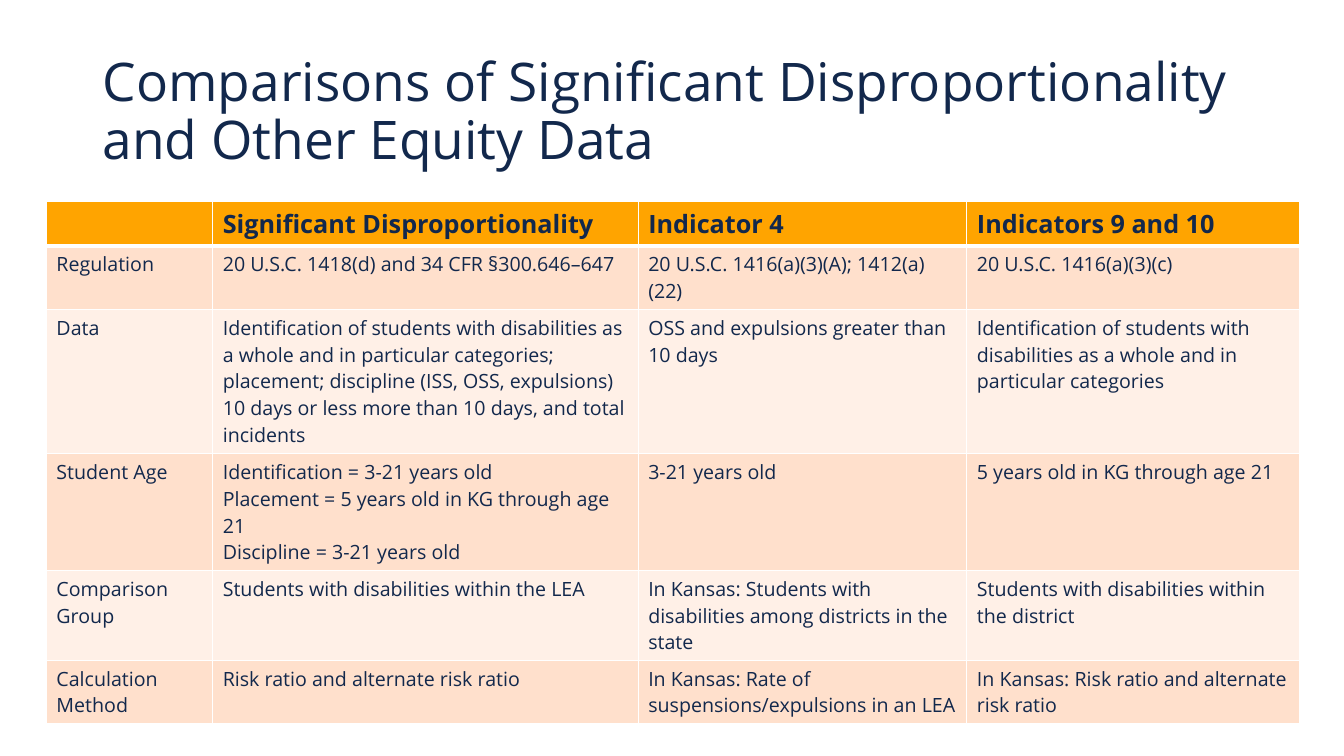
from lxml import etree
from pptx import Presentation, util as u
from pptx.dml.color import RGBColor
from pptx.enum import text
from pptx.oxml.ns import qn

# Content
TITLE = "Comparisons of Significant Disproportionality and Other Equity Data"
COMPARISON = [
    ("", "Significant Disproportionality", "Indicator 4", "Indicators 9 and 10"),
    ("Regulation", "20 U.S.C. 1418(d) and 34 CFR §300.646–647",
     "20 U.S.C. 1416(a)(3)(A); 1412(a)(22)", "20 U.S.C. 1416(a)(3)(c)"),
    ("Data",
     "Identification of students with disabilities as a whole and in particular "
     "categories; placement; discipline (ISS, OSS, expulsions) 10 days or less "
     "more than 10 days, and total incidents",
     "OSS and expulsions greater than 10 days",
     "Identification of students with disabilities as a whole and in particular categories"),
    ("Student Age",
     "Identification = 3-21 years old\n"
     "Placement = 5 years old in KG through age 21\n"
     "Discipline = 3-21 years old",
     "3-21 years old", "5 years old in KG through age 21"),
    ("Comparison Group", "Students with disabilities within the LEA",
     "In Kansas: Students with disabilities among districts in the state",
     "Students with disabilities within the district"),
    ("Calculation Method", "Risk ratio and alternate risk ratio",
     "In Kansas: Rate of suspensions/expulsions in an LEA",
     "In Kansas: Risk ratio and alternate risk ratio"),
]

# Format
COLORS = {"ink": "12284C", "header": "FFA400", "odd": "FFE0CC",
          "even": "FFF0E7", "rule": "FFFFFF"}
TITLE_BOX = (0.92, 0.4, 11.98, 1.45)
GRID_LEFT, GRID_TOP = 0.46, 2
COLUMNS = (1.65, 4.22, 3.26, 3.3)
ROWS = (0.44, 0.63, 1.43, 1.16, 0.89, 0.63)
THIN, THICK = 1, 3
INK = RGBColor.from_string(COLORS["ink"])
BASE = {"name": "Open Sans", "bold": False}
TITLE_FONT = {**BASE, "size": u.Pt(38)}
HEADER_FONT = {**BASE, "size": u.Pt(18), "bold": True}
BODY_FONT = {**BASE, "size": u.Pt(14)}


def style(paragraph, font_values):
    for name, value in font_values.items():
        setattr(paragraph.font, name, value)
    paragraph.font.color.rgb = INK


def rule_cell(cell, widths):
    """Add the cell's borders, which must come before its fill."""
    properties = cell._tc.get_or_add_tcPr()
    for place, (side, width) in enumerate(widths.items()):
        line = etree.Element(qn(f"a:ln{side}"), w=str(u.Pt(width)))
        fill = etree.SubElement(line, qn("a:solidFill"))
        etree.SubElement(fill, qn("a:srgbClr"), val=COLORS["rule"])
        properties.insert(place, line)


deck = Presentation()
deck.slide_width, deck.slide_height = u.Inches(13.33), u.Inches(7.5)
slide = deck.slides.add_slide(deck.slide_layouts[6])

# Title
title = slide.shapes.add_textbox(*map(u.Inches, TITLE_BOX)).text_frame
title.word_wrap = True
title.vertical_anchor = text.MSO_ANCHOR.MIDDLE
title.text = TITLE
title.paragraphs[0].line_spacing = 0.9
style(title.paragraphs[0], TITLE_FONT)

# Comparison table
table = slide.shapes.add_table(
    len(ROWS), len(COLUMNS),
    *map(u.Inches, (GRID_LEFT, GRID_TOP, sum(COLUMNS), sum(ROWS)))).table
for column, width in zip(table.columns, COLUMNS):
    column.width = u.Inches(width)
for row, height in zip(table.rows, ROWS):
    row.height = u.Inches(height)

for r, entries in enumerate(COMPARISON):
    band = "header" if r == 0 else "odd" if r % 2 else "even"
    borders = {"L": THIN, "R": THIN,
               "T": THICK if r == 1 else THIN,
               "B": THICK if r == 0 else THIN}
    for c, entry in enumerate(entries):
        cell = table.cell(r, c)
        cell.text = entry
        cell.fill.solid()
        cell.fill.fore_color.rgb = RGBColor.from_string(COLORS[band])
        rule_cell(cell, borders)
        for paragraph in cell.text_frame.paragraphs:
            style(paragraph, BODY_FONT if r else HEADER_FONT)

deck.save("out.pptx")
